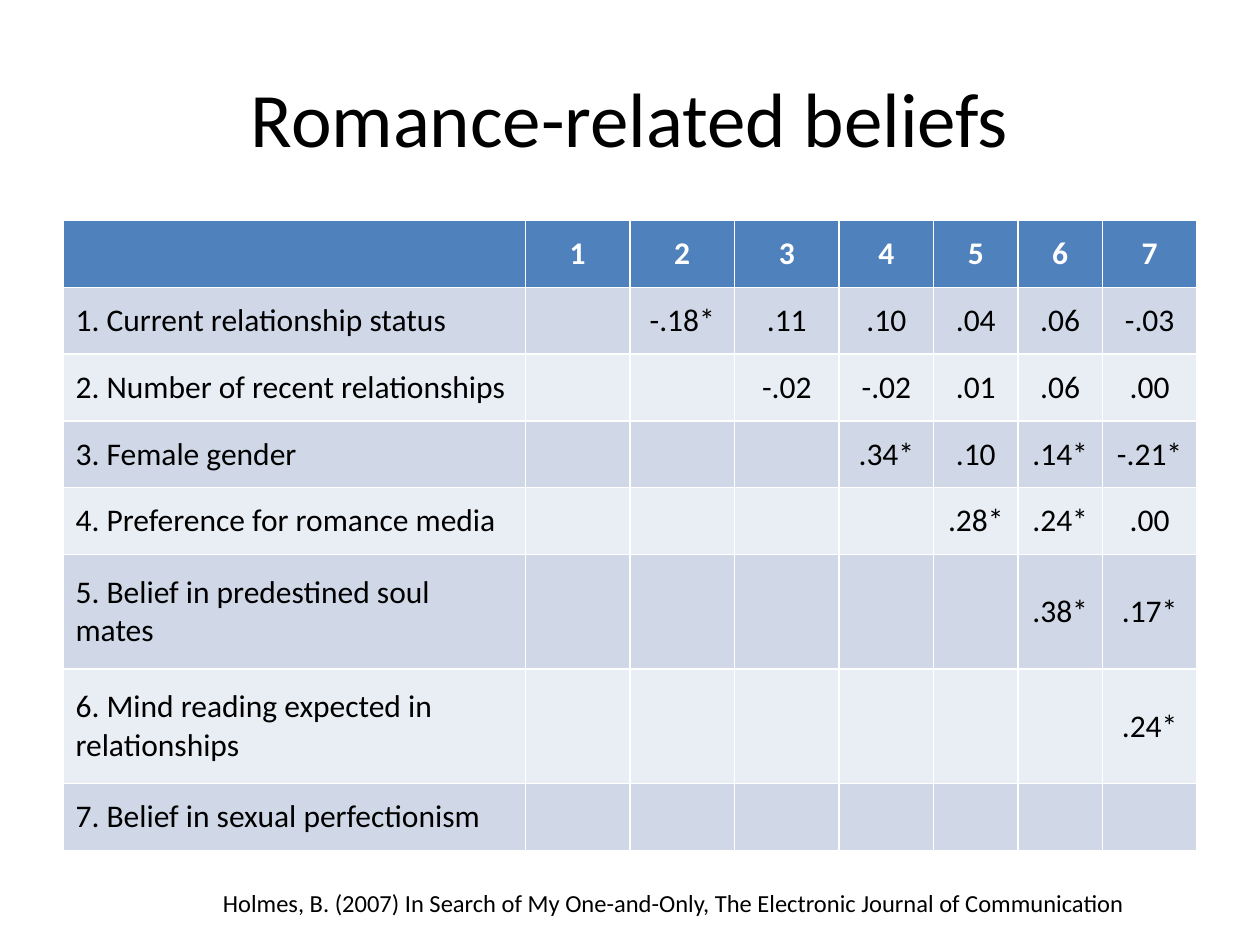
from dataclasses import dataclass

from pptx import Presentation
from pptx.dml.color import RGBColor
from pptx.enum import text
from pptx.util import Inches, Pt

FONT = "Calibri"
BLACK = RGBColor(0x00, 0x00, 0x00)
WHITE = RGBColor(0xFF, 0xFF, 0xFF)
HEADER_BLUE = RGBColor(0x4F, 0x81, 0xBD)
BANDS = (RGBColor(0xD0, 0xD8, 0xE8), RGBColor(0xE9, 0xED, 0xF4))

COLUMN_WIDTHS = (3.67, 0.83, 0.83, 0.83, 0.75, 0.67, 0.67, 0.75)
SINGLE_LINE, DOUBLE_LINE = 0.53, 0.91


@dataclass(frozen=True)
class Measure:
    label: str
    correlations: tuple[str, ...] = ()
    height: float = SINGLE_LINE


MEASURES = (
    Measure("Current relationship status", ("-.18*", ".11", ".10", ".04", ".06", "-.03")),
    Measure("Number of recent relationships", ("-.02", "-.02", ".01", ".06", ".00")),
    Measure("Female gender", (".34*", ".10", ".14*", "-.21*")),
    Measure("Preference for romance media", (".28*", ".24*", ".00")),
    Measure("Belief in predestined soul mates", (".38*", ".17*"), DOUBLE_LINE),
    Measure("Mind reading expected in relationships", (".24*",), DOUBLE_LINE),
    Measure("Belief in sexual perfectionism"),
)


def style_paragraph(para, size: float, color: RGBColor, align, bold: bool = False) -> None:
    para.alignment = align
    para.font.name = FONT
    para.font.size = Pt(size)
    para.font.bold = bold
    para.font.color.rgb = color


def fill_row(table, index: int, values: list[str], height: float) -> None:
    is_header = index == 0
    table.rows[index].height = Inches(height)
    for column, value in enumerate(values):
        cell = table.cell(index, column)
        cell.text = value
        cell.vertical_anchor = text.MSO_ANCHOR.MIDDLE
        cell.fill.solid()
        cell.fill.fore_color.rgb = HEADER_BLUE if is_header else BANDS[(index - 1) % 2]
        align = text.PP_ALIGN.CENTER if column else text.PP_ALIGN.LEFT
        style_paragraph(cell.text_frame.paragraphs[0], 18,
                        WHITE if is_header else BLACK, align, is_header)


def add_title(page) -> None:
    title = page.shapes.title
    title.left, title.top = Inches(0.5), Inches(0.3)
    title.width, title.height = Inches(9), Inches(1.25)
    title.text = "Romance-related beliefs"
    title.text_frame.vertical_anchor = text.MSO_ANCHOR.MIDDLE
    style_paragraph(title.text_frame.paragraphs[0], 44, BLACK, text.PP_ALIGN.CENTER)


def add_correlations(page) -> None:
    count = len(MEASURES)
    table = page.shapes.add_table(count + 1, count + 1, Inches(0.5), Inches(1.75),
                                  Inches(9), Inches(5)).table
    for column, width in zip(table.columns, COLUMN_WIDTHS):
        column.width = Inches(width)
    numbers = [str(number) for number in range(1, count + 1)]
    fill_row(table, 0, ["", *numbers], SINGLE_LINE)
    for number, measure in enumerate(MEASURES, start=1):
        blanks = [""] * (count - len(measure.correlations))
        values = [f"{number}. {measure.label}", *blanks, *measure.correlations]
        fill_row(table, number, values, measure.height)


def add_citation(page) -> None:
    box = page.shapes.add_textbox(Inches(1.67), Inches(7), Inches(7.42), Inches(0.34))
    frame = box.text_frame
    frame.word_wrap = False
    frame.auto_size = text.MSO_AUTO_SIZE.SHAPE_TO_FIT_TEXT
    frame.text = ("Holmes, B. (2007) In Search of My One-and-Only, "
                  "The Electronic Journal of Communication")
    style_paragraph(frame.paragraphs[0], 14, BLACK, text.PP_ALIGN.LEFT)


def main() -> None:
    deck = Presentation()
    deck.slide_width, deck.slide_height = Inches(10), Inches(7.5)
    page = deck.slides.add_slide(deck.slide_layouts.get_by_name("Title Only"))
    add_title(page)
    add_correlations(page)
    add_citation(page)
    deck.save("out.pptx")


if __name__ == "__main__":
    main()
